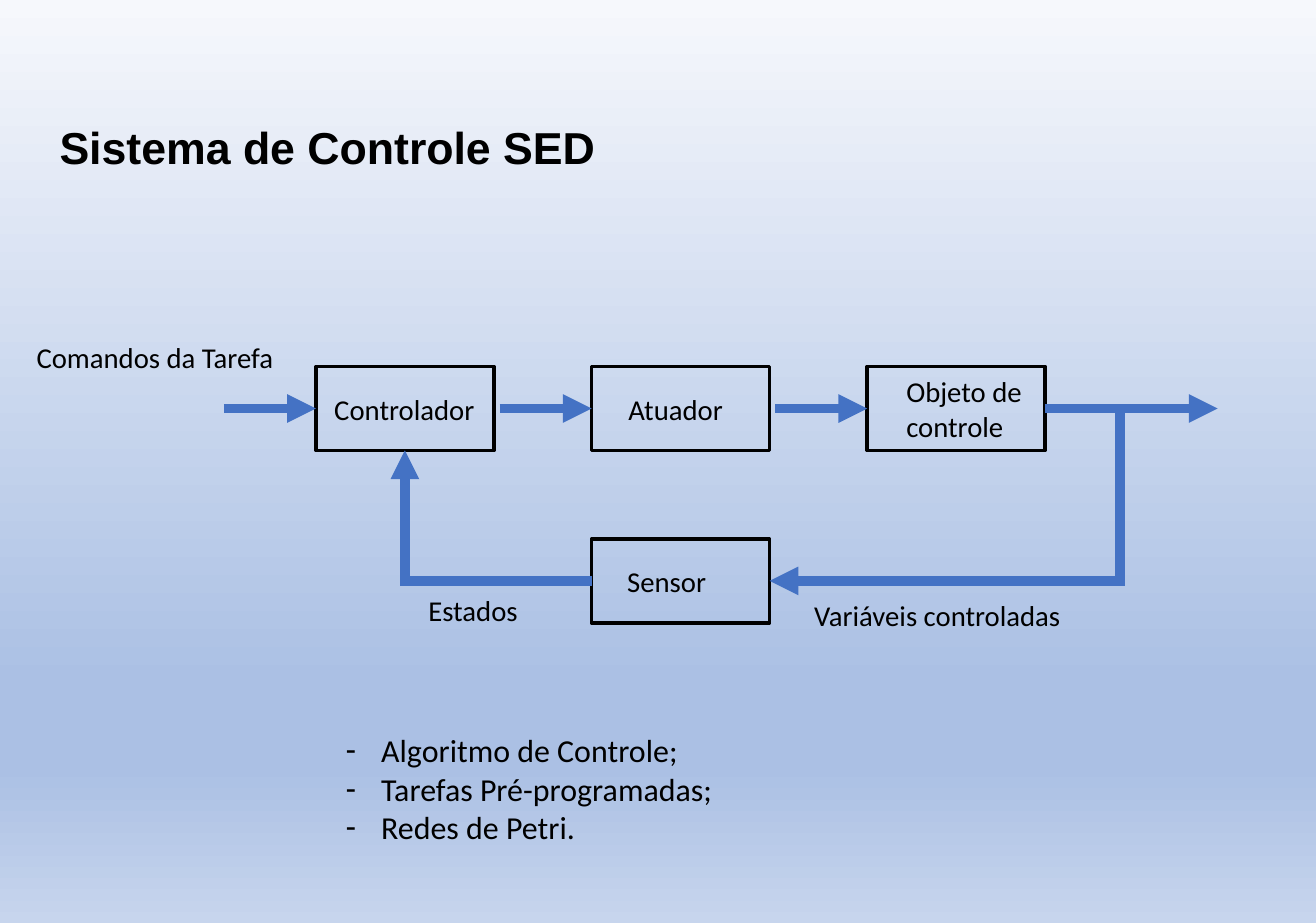
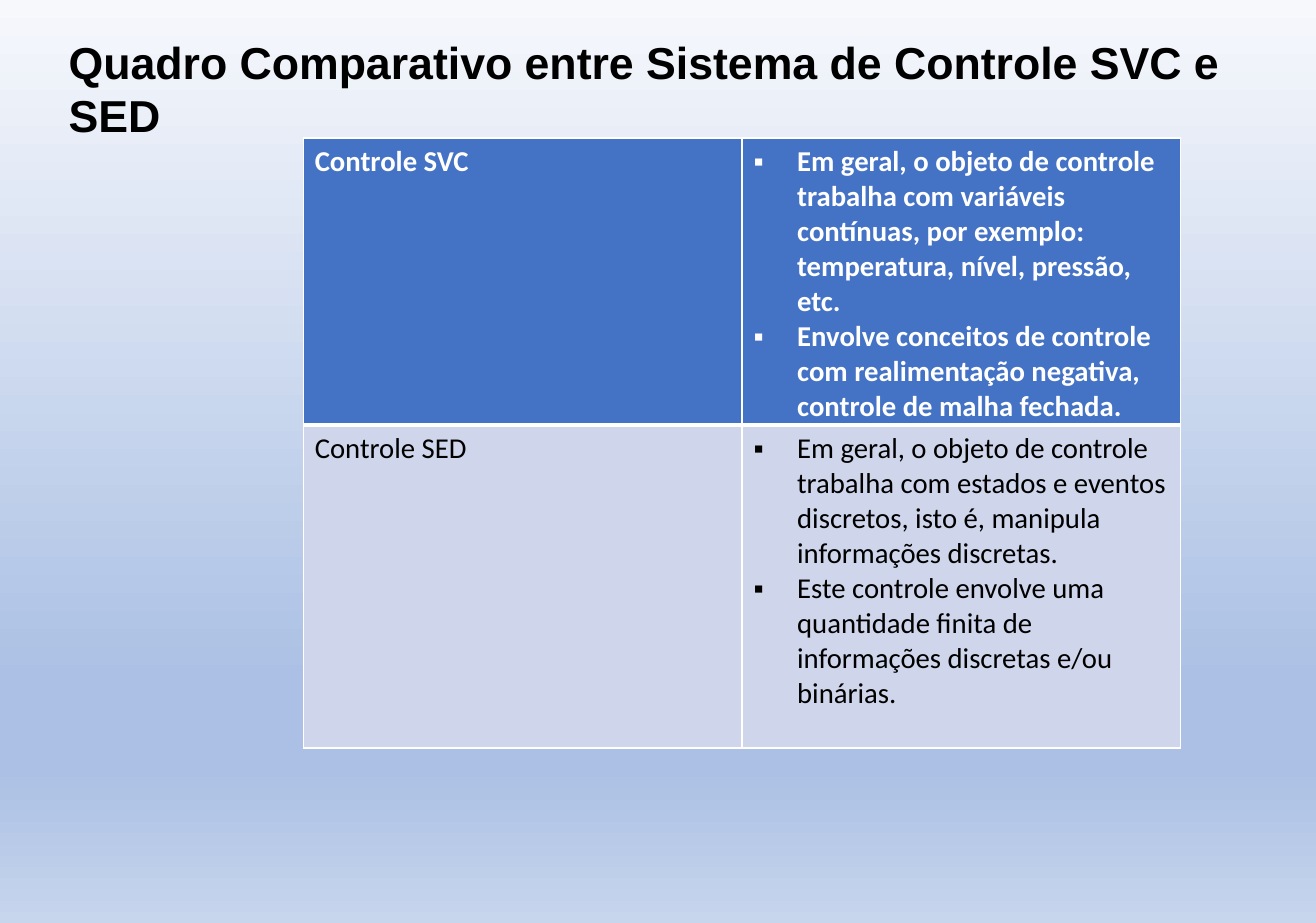
from lxml import etree
from pptx import Presentation
from pptx.dml.color import RGBColor
from pptx.enum.shapes import MSO_CONNECTOR, MSO_SHAPE
from pptx.enum.text import MSO_ANCHOR, MSO_AUTO_SIZE, PP_ALIGN
from pptx.oxml.ns import qn
from pptx.util import Cm, Inches, Pt

BLACK, WHITE, BLUE, PALE = "000000", "FFFFFF", "4472C4", "CFD5EA"
BACKDROP = [(0, "F6F8FC"), (74, "ABC0E4"), (83, "ABC0E4"), (100, "C7D5ED")]
TITLE = dict(size=28, font="Arial", bold=True)
TOP, LEFT, BOTTOM, RIGHT = range(4)

# Diagram grid
COLUMN_X = [2.75 + 2.4 * i for i in range(3)]
ROW_Y = [3.19, 4.69]
BLOCK_W, BLOCK_H = 1.55, 0.73
MAIN_Y, FEEDBACK_Y = [y + BLOCK_H / 2 for y in ROW_Y]
ARROW_LENGTH, HALF_LINE = 0.8, 0.04
OUTPUT_X, BRANCH_X = 10.6, 9.75

# name: (column, row, left inset, lines)
BLOCKS = {
    "controller": (0, 0, 0.16, ["Controlador"]),
    "actuator": (1, 0, 0.32, ["Atuador"]),
    "plant": (2, 0, 0.34, ["Objeto de", "controle"]),
    "sensor": (1, 1, 0.31, ["Sensor"]),
}
LABELS = [
    ("Comandos da Tarefa", (0.22, 2.91, 2.81, 0.4)),
    ("Estados", (3.63, 5.11, 4.59, 0.4)),
    ("Variáveis controladas", (6.99, 5.15, 4.59, 0.4)),
]
NOTES = ["Algoritmo de Controle;", "Tarefas Pré-programadas;", "Redes de Petri."]

# (system, features, fill, text colour, bold, row height)
COMPARISON = [
    ("Controle SVC", [
        "Em geral, o objeto de controle trabalha com variáveis contínuas, "
        "por exemplo: temperatura, nível, pressão, etc.",
        "Envolve conceitos de controle com realimentação negativa, "
        "controle de malha fechada.",
    ], BLUE, WHITE, True, 2.5),
    ("Controle SED", [
        "Em geral, o objeto de controle trabalha com estados e eventos "
        "discretos, isto é, manipula informações discretas.",
        "Este controle envolve uma quantidade finita de informações "
        "discretas e/ou binárias.",
    ], PALE, BLACK, False, 2.81),
]


def rgb(value):
    return RGBColor.from_string(value)


def inches(values):
    return [Inches(v) for v in values]


def add_xml(parent, tag, **attributes):
    return etree.SubElement(parent, qn(tag), attributes)


def write(frame, lines, size=18, font="Calibri", color=BLACK, bold=False,
          bullet=None, indent=0):
    for i, line in enumerate(lines):
        para = frame.paragraphs[0] if i == 0 else frame.add_paragraph()
        para.alignment = PP_ALIGN.LEFT
        if bullet:
            props = para._p.get_or_add_pPr()
            props.set("marL", str(Inches(indent)))
            props.set("indent", str(-Inches(indent)))
            add_xml(props, "a:buFont", typeface="Arial")
            add_xml(props, "a:buChar", char=bullet)
        span = para.add_run()
        span.text = line
        span.font.size = Pt(size)
        span.font.name = font
        span.font.bold = bold
        span.font.color.rgb = rgb(color)


def add_text(page, lines, place, **style):
    frame = page.shapes.add_textbox(*inches(place)).text_frame
    frame.word_wrap = True
    frame.auto_size = MSO_AUTO_SIZE.SHAPE_TO_FIT_TEXT
    write(frame, lines, **style)


def add_block(page, column, row, inset, lines):
    box = page.shapes.add_shape(MSO_SHAPE.RECTANGLE, *inches(
        (COLUMN_X[column], ROW_Y[row], BLOCK_W, BLOCK_H)))
    box.shadow.inherit = False
    box.fill.background()
    box.line.color.rgb = rgb(BLACK)
    box.line.width = Pt(2.25)
    frame = box.text_frame
    frame.margin_left, frame.margin_right = Inches(inset), 0
    frame.margin_top = frame.margin_bottom = 0
    frame.vertical_anchor = MSO_ANCHOR.MIDDLE
    write(frame, lines)
    return box


def add_flow(page, start, end, source=None, target=None, arrow=True):
    """Draw a thick line; source and target are (block, side) joints."""
    line = page.shapes.add_connector(
        MSO_CONNECTOR.STRAIGHT, *inches(start), *inches(end))
    if source:
        line.begin_connect(*source)
    if target:
        line.end_connect(*target)
    line.line.color.rgb = rgb(BLUE)
    line.line.width = Pt(6)
    if arrow:
        add_xml(line.line._get_or_add_ln(), "a:tailEnd", type="triangle")
    add_xml(line._element.spPr, "a:effectLst")


def set_borders(cell, **widths):
    props = cell._tc.get_or_add_tcPr()
    for i, side in enumerate("LRTB"):
        border = etree.Element(qn("a:ln" + side), w=str(Pt(widths.get(side, 1))))
        add_xml(add_xml(border, "a:solidFill"), "a:srgbClr", val=WHITE)
        props.insert(i, border)


def set_backdrop(master):
    fill = master.background.fill
    fill.gradient()
    fill.gradient_angle = 270
    stops = next(master._element.iter(qn("a:gsLst")))
    for stop in list(stops):
        stops.remove(stop)
    for share, color in BACKDROP:
        stop = add_xml(stops, "a:gs", pos=str(share * 1000))
        add_xml(stop, "a:srgbClr", val=color)


def build_diagram(page):
    add_text(page, ["Sistema de Controle SED"], (0.42, 0.99, 10.37, 0.57), **TITLE)
    blocks = {name: add_block(page, *spec) for name, spec in BLOCKS.items()}
    for x, name in zip(COLUMN_X, ("controller", "actuator", "plant")):
        add_flow(page, (x - ARROW_LENGTH, MAIN_Y), (x, MAIN_Y),
                 target=(blocks[name], LEFT))
    plant_right = COLUMN_X[2] + BLOCK_W
    add_flow(page, (plant_right, MAIN_Y), (OUTPUT_X, MAIN_Y),
             source=(blocks["plant"], RIGHT))
    add_flow(page, (BRANCH_X, FEEDBACK_Y + HALF_LINE), (BRANCH_X, MAIN_Y), arrow=False)
    sensor, controller = blocks["sensor"], blocks["controller"]
    add_flow(page, (BRANCH_X, FEEDBACK_Y), (COLUMN_X[1] + BLOCK_W, FEEDBACK_Y),
             target=(sensor, RIGHT))
    return_x = COLUMN_X[0] + BLOCK_W / 2
    add_flow(page, (COLUMN_X[1], FEEDBACK_Y), (return_x - HALF_LINE, FEEDBACK_Y),
             source=(sensor, LEFT), arrow=False)
    add_flow(page, (return_x, FEEDBACK_Y), (return_x, ROW_Y[0] + BLOCK_H),
             target=(controller, BOTTOM))
    for label, place in LABELS:
        add_text(page, [label], place)
    add_text(page, NOTES, (2.91, 6.31, 6.19, 1.11), size=20, bullet="-", indent=0.31)


def build_comparison(page):
    add_text(page, ["Quadro Comparativo entre Sistema de Controle SVC e SED"],
             (0.5, 0.25, 10.37, 1.04), **TITLE)
    height = sum(row[-1] for row in COMPARISON)
    table = page.shapes.add_table(
        len(COMPARISON), 2, *inches((2.64, 1.2, 7.64, height))).table
    table.horz_banding = False
    bullets = dict(bullet="▪", indent=0.38)
    for r, (system, features, fill, color, bold, row_height) in enumerate(COMPARISON):
        table.rows[r].height = Inches(row_height)
        for c, (lines, extra) in enumerate([([system], {}), (features, bullets)]):
            cell = table.cell(r, c)
            cell.margin_bottom = 0
            cell.fill.solid()
            cell.fill.fore_color.rgb = rgb(fill)
            set_borders(cell, **({"B": 3} if r == 0 else {"T": 3}))
            write(cell.text_frame, lines, color=color, bold=bold, **extra)


def main():
    deck = Presentation()
    deck.slide_width, deck.slide_height = Cm(29.1), Cm(20.4)
    set_backdrop(deck.slide_master)
    for build in (build_diagram, build_comparison):
        build(deck.slides.add_slide(deck.slide_layouts[6]))
    deck.save("out.pptx")


if __name__ == "__main__":
    main()
